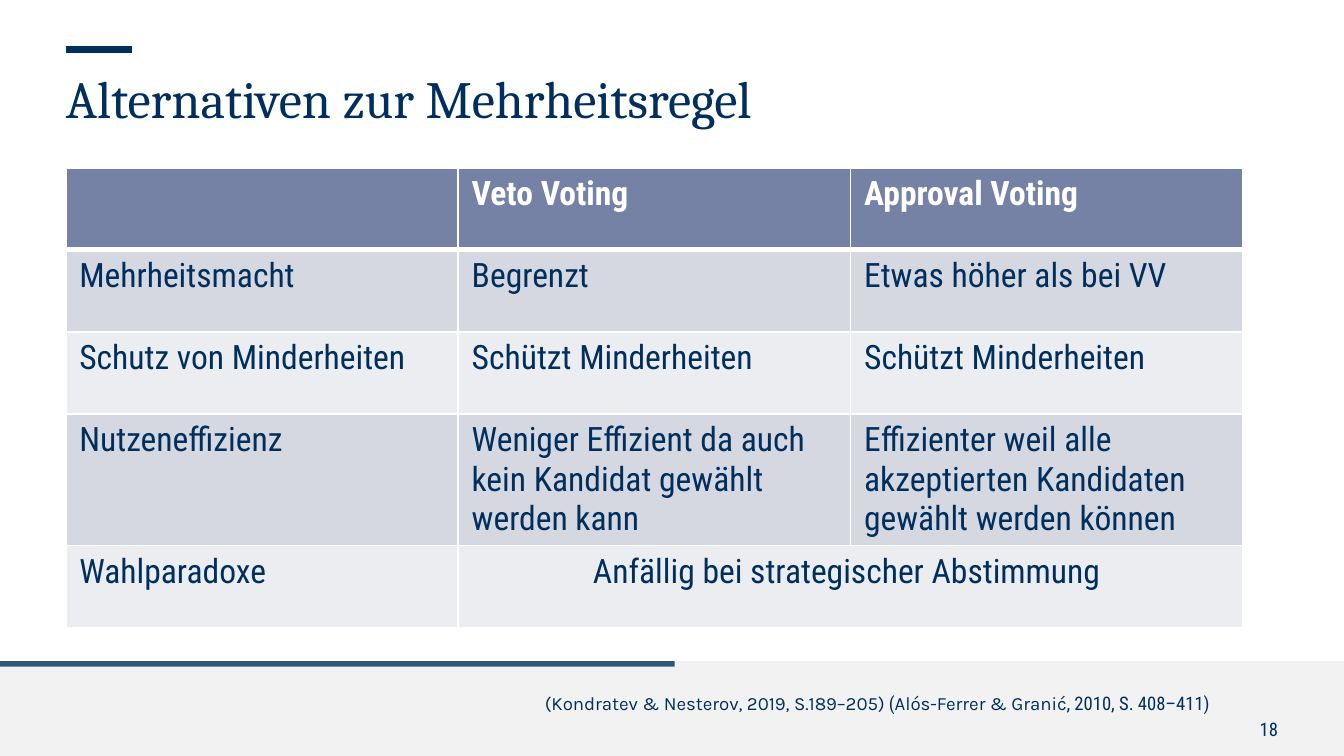
from lxml import etree
from pptx import Presentation
from pptx.dml.color import RGBColor
from pptx.enum.shapes import MSO_CONNECTOR as CONN, MSO_SHAPE as SHAPE
from pptx.enum.text import MSO_ANCHOR as ANCHOR, MSO_AUTO_SIZE as AUTO, PP_ALIGN as ALIGN
from pptx.oxml.ns import qn
from pptx.util import Inches, Pt

NAVY = RGBColor(0x00, 0x2F, 0x5D)
WHITE = RGBColor(0xFF, 0xFF, 0xFF)
FOOTER = RGBColor(0xF2, 0xF2, 0xF2)
HEADER = RGBColor(0x76, 0x82, 0xA5)
BANDS = (RGBColor(0xEC, 0xED, 0xF0), RGBColor(0xD6, 0xD8, 0xE1))
SERIF, SANS, NOTE = "Cambria", "Roboto Condensed", "Karla"

ROWS = [
    ("", "Veto Voting", "Approval Voting"),
    ("Mehrheitsmacht", "Begrenzt", "Etwas höher als bei VV"),
    ("Schutz von Minderheiten", "Schützt Minderheiten", "Schützt Minderheiten"),
    ("Nutzeneffizienz", "Weniger Effizient da auch kein Kandidat gewählt werden kann",
     "Effizienter weil alle akzeptierten Kandidaten gewählt werden können"),
    ("Wahlparadoxe", "Anfällig bei strategischer Abstimmung ", ""),
]
SOURCES = [
    ("(Kondratev & Nesterov, 2019, S.189–205)", NOTE),
    (" (", SANS),
    ("Alós-Ferrer & Granić", NOTE),
    (", 2010, S. 408–411)", SANS),
]


class Deck:
    """Holds the style and the current slide and adds elements to it."""

    def __init__(self, width, height):
        self.prs = Presentation()
        self.prs.slide_width, self.prs.slide_height = Inches(width), Inches(height)
        self.s = self.prs.slides.add_slide(self.prs.slide_layouts[5])

    def style(self, r, font, size, color=NAVY, bold=False):
        r.font.name, r.font.size, r.font.bold = font, Pt(size), bold
        r.font.color.rgb = color

    def frame(self, sp):
        tf = sp.text_frame
        tf.margin_left = tf.margin_top = tf.margin_right = tf.margin_bottom = 0
        tf.word_wrap, tf.auto_size, tf.vertical_anchor = True, AUTO.NONE, ANCHOR.TOP
        return tf

    def title(self, text, x, y, w, h):
        sp = self.s.shapes.title
        sp.left, sp.top, sp.width, sp.height = map(Inches, (x, y, w, h))
        tf = self.frame(sp)
        tf.text = text
        p = tf.paragraphs[0]
        p.alignment = ALIGN.LEFT
        self.style(p.runs[0], SERIF, 28)

    def text(self, runs, x, y, w, h):
        sp = self.s.shapes.add_textbox(*map(Inches, (x, y, w, h)))
        p = self.frame(sp).paragraphs[0]
        p.alignment = ALIGN.RIGHT
        for text, font in runs:
            r = p.add_run()
            r.text = text
            self.style(r, font, 10)

    def bar(self, x, y, w, h, color, opacity=100):
        sp = self.s.shapes.add_shape(SHAPE.RECTANGLE, *map(Inches, (x, y, w, h)))
        sp.shadow.inherit = False
        sp.fill.solid()
        sp.fill.fore_color.rgb = color
        sp.line.fill.background()
        if opacity < 100:
            clr = sp.fill._xPr.find(".//" + qn("a:srgbClr"))
            etree.SubElement(clr, qn("a:alpha"), val=str(opacity * 1000))

    def line(self, x1, y1, x2, y2, weight):
        cxn = self.s.shapes.add_connector(CONN.STRAIGHT, *map(Inches, (x1, y1, x2, y2)))
        cxn.line.color.rgb, cxn.line.width = NAVY, Pt(weight)
        etree.SubElement(cxn._element.spPr, qn("a:effectLst"))

    def borders(self, cell, **weights):
        tc_pr = cell._tc.get_or_add_tcPr()
        for side in "LRTB":
            ln = etree.SubElement(tc_pr, qn("a:ln" + side), w=str(Pt(weights.get(side, 1))))
            fill = etree.SubElement(ln, qn("a:solidFill"))
            etree.SubElement(fill, qn("a:srgbClr"), val=str(WHITE))

    def table(self, rows, x, y, w, h, row_height):
        size = len(rows), len(rows[0])
        gf = self.s.shapes.add_table(*size, *map(Inches, (x, y, w, h)))
        tbl = gf.table
        tbl.horz_banding = False
        for i, row in enumerate(rows):
            tbl.rows[i].height = Inches(row_height)
            heavy = {0: {"B": 3}, 1: {"T": 3}}.get(i, {})
            for j, text in enumerate(row):
                cell = tbl.cell(i, j)
                self.borders(cell, **heavy)
                cell.fill.solid()
                cell.fill.fore_color.rgb = BANDS[i % 2] if i else HEADER
                cell.text = text
                for r in cell.text_frame.paragraphs[0].runs:
                    self.style(r, SANS, 18, NAVY if i else WHITE, i == 0)
        gf.height = Inches(h)
        return tbl


def main():
    deck = Deck(10, 5.625)
    deck.bar(0, 4.92, 10, 0.71, FOOTER)
    deck.text([("18", SANS)], 9.01, 5.34, 0.5, 0.17)
    deck.bar(0, 4.92, 5.02, 0.04, NAVY, opacity=80)
    deck.line(0.49, 0.37, 0.98, 0.37, 3.5)
    deck.text(SOURCES, 3.28, 5.15, 5.72, 0.18)
    deck.title("Alternativen zur Mehrheitsregel", 0.49, 0.49, 9.2, 0.9)
    tbl = deck.table(ROWS, 0.49, 1.25, 8.76, 3.46, 0.61)
    paradox = tbl.cell(4, 1)
    paradox.merge(tbl.cell(4, 2))
    paradox.text_frame.paragraphs[0].alignment = ALIGN.CENTER
    deck.prs.save("out.pptx")


if __name__ == "__main__":
    main()
